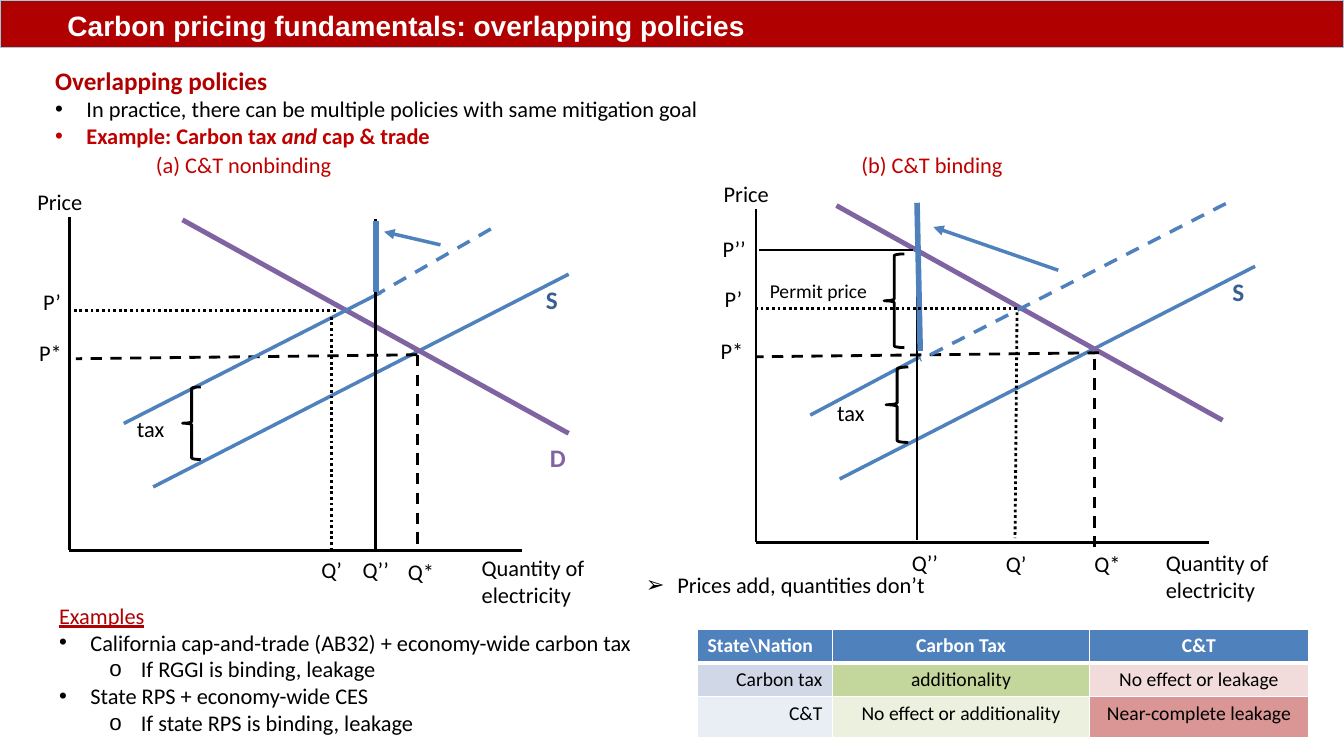
"""Build the slide on overlapping carbon pricing policies."""
from dataclasses import dataclass
from typing import Any

from pptx import Presentation
from pptx.dml.color import RGBColor
from pptx.enum.dml import MSO_LINE_DASH_STYLE as Dash
from pptx.enum.shapes import MSO_CONNECTOR as Link, MSO_SHAPE as Shape
from pptx.enum.text import MSO_ANCHOR as Anchor, MSO_AUTO_SIZE as AutoSize, PP_ALIGN as Align
from pptx.oxml.ns import qn
from pptx.util import Cm, Pt
from lxml.etree import SubElement

COLORS = {
    "banner": "B00000", "edge": "93CDDD", "red": "C00000", "black": "000000",
    "white": "FFFFFF", "blue": "4F81BD", "navy": "376092", "purple": "8064A2",
    "steel": "D0D8E8", "mist": "E9EDF4", "green": "C3D69B", "sage": "EBF1DE",
    "blush": "F2DCDB", "rose": "D99694",
}


@dataclass(frozen=True)
class Line:
    x1: float
    y1: float
    x2: float
    y2: float
    color: str = "black"
    width: float = 2
    dash: Any = None
    arrow: bool = False


@dataclass(frozen=True)
class Label:
    text: str
    left: float
    top: float
    width: float = 1.63
    height: float = 0.94
    color: str = "black"
    size: float = 16
    bold: bool = False


@dataclass(frozen=True)
class Brace:
    left: float
    top: float
    width: float
    height: float


@dataclass(frozen=True)
class Span:
    text: str
    color: str = "black"
    size: float = 16
    bold: bool = False
    italic: bool = False
    underline: bool = False


@dataclass(frozen=True)
class Entry:
    spans: tuple[Span, ...]
    bullet: str = ""
    level: int = 0


@dataclass(frozen=True)
class Panel:
    shift_x: float
    shift_y: float
    lines: tuple[Line, ...]
    braces: tuple[Brace, ...]
    labels: tuple[Label, ...]


SHARED_LINES = (
    Line(14.33, 6.91, 3.86, 12.27, "blue", 2.5),
    Line(1.75, 5.46, 1.75, 13.87),
    Line(13.16, 13.87, 1.75, 13.87),
)
SHARED_LABELS = (
    Label("S", 13.51, 7.04, 2.54, 1.02, "navy", 18, True),
    Label("Price", 0.69, 4.62, 2.21),
)
NONBINDING = Panel(0, 0, (
    Line(4.6, 5.54, 14.33, 10.92, "purple", 3.5),
    Line(10.52, 8.94, 10.52, 13.87, dash=Dash.DASH),
    Line(10.52, 8.94, 1.91, 9.04, dash=Dash.DASH),
    Line(8.46, 7.82, 1.8, 7.82, dash=Dash.ROUND_DOT),
    Line(9.6, 7.37, 3.12, 10.67, "blue", 2.5),
    Line(8.36, 7.98, 8.36, 13.82, dash=Dash.ROUND_DOT),
    Line(9.47, 5.51, 9.47, 13.89),
    Line(9.47, 5.56, 9.47, 7.37, "blue", 4),
    Line(11.1, 6.17, 9.68, 5.84, "blue", 2.5, arrow=True),
    Line(12.37, 5.77, 9.58, 7.37, "blue", 2.5, Dash.DASH),
), (Brace(4.6, 9.75, 0.46, 1.83),), (
    Label("(a) C&T nonbinding", 3.68, 3.68, 6, color="red"),
    Label("D", 13.61, 11.02, 3.23, 1.02, "purple", 18, True),
    Label("tax", 3.2, 10.34, 2.21),
    Label("P’", 0.84, 7.14),
    Label("P*", 0.74, 8.43),
    Label("Q’", 7.85, 13.89, 1.07),
    Label("Q’’", 8.89, 13.89, 1.19),
    Label("Q*", 10.03, 13.94),
    Label("Quantity of electricity", 11.89, 13.84, 4.2, 1.63),
))
BINDING = Panel(17.3, -0.2, (
    Line(23.19, 8.99, 20.42, 10.46, "blue", 2.5),
    Line(23.11, 5.26, 23.11, 13.61),
    Line(21.08, 5.18, 30.81, 10.59, "purple", 3.5),
    Line(27.58, 9.04, 27.58, 13.97, dash=Dash.DASH),
    Line(27.69, 8.89, 19.08, 8.99, dash=Dash.DASH),
    Line(30.89, 5.13, 23.19, 9.07, "blue", 2.5, Dash.DASH),
    Line(23.11, 5.11, 23.19, 8.84, "blue", 4),
    Line(26.67, 6.81, 23.52, 5.72, "blue", 2.5, arrow=True),
    Line(23.01, 6.3, 19.13, 6.3),
    Line(25.63, 7.77, 18.97, 7.77, dash=Dash.ROUND_DOT),
    Line(25.63, 7.87, 25.58, 13.56, dash=Dash.ROUND_DOT),
), (Brace(22.28, 6.4, 0.51, 2.36), Brace(22.33, 9.25, 0.56, 1.9)), (
    Label("(b) C&T binding", 21.46, 3.68, 6, color="red"),
    Label("Permit price", 19.15, 6.91, 4.98, 0.86, size=14),
    Label("tax", 20.85, 9.93, 2.21),
    Label("P’’", 17.96, 5.79),
    Label("P’", 18.01, 7.06),
    Label("P*", 17.91, 8.38),
    Label("Q’’", 22.73, 13.72, 1.19),
    Label("Q’", 25.1, 13.74, 1.19),
    Label("Q*", 27.33, 13.74),
    Label("Quantity of electricity", 29.13, 13.72, 3.81, 1.63),
))
INTRO = (
    Entry((Span("Overlapping policies", "banner", 18, True),)),
    Entry((Span("In practice, there can be multiple policies with same mitigation goal"),), "•"),
    Entry((Span("Example: Carbon tax ", "red", bold=True),
           Span("and", "red", bold=True, italic=True),
           Span(" cap & trade", "red", bold=True)), "•"),
)
EXAMPLES = (
    Entry((Span("Examples", "banner", underline=True),)),
    Entry((Span("California cap-and-trade (AB32) + economy-wide carbon tax"),), "•"),
    Entry((Span("If RGGI is binding, leakage"),), "o", 1),
    Entry((Span("State RPS + economy-wide CES"),), "•"),
    Entry((Span("If state RPS is binding, leakage"),), "o", 1),
)
LESSON = (Entry((Span("Prices add, quantities don’t"),), "➢"),)
TABLE_ROWS = (
    (("State\\Nation", "blue"), ("Carbon Tax", "blue"), ("C&T", "blue")),
    (("Carbon tax", "steel"), ("additionality", "green"), ("No effect or leakage", "blush")),
    (("C&T", "mist"), ("No effect or additionality", "sage"), ("Near-complete leakage", "rose")),
)


def rgb(name: str) -> RGBColor:
    """Return the named colour."""
    return RGBColor.from_string(COLORS[name])


def write_span(para: Any, span: Span, face: str = "Calibri") -> None:
    """Add one formatted run to a paragraph."""
    run = para.add_run()
    run.text = span.text
    formats = {"name": face, "size": Pt(span.size), "bold": span.bold,
               "italic": span.italic, "underline": span.underline}
    for key, value in formats.items():
        setattr(run.font, key, value)
    run.font.color.rgb = rgb(span.color)


def add_text(page: Any, entries: tuple[Entry, ...], left: float, top: float,
             width: float, height: float) -> None:
    """Add a text box with optional bullets."""
    frame = page.shapes.add_textbox(Cm(left), Cm(top), Cm(width), Cm(height)).text_frame
    frame.word_wrap = True
    for index, entry in enumerate(entries):
        para = frame.paragraphs[0] if index == 0 else frame.add_paragraph()
        para.level = entry.level
        if entry.bullet:
            props = para._p.get_or_add_pPr()
            props.set("marL", str(Cm(0.79 + 1.27 * entry.level)))
            props.set("indent", str(Cm(-0.79)))
            SubElement(props, qn("a:buFont"), typeface="Arial")
            SubElement(props, qn("a:buChar"), char=entry.bullet)
        for span in entry.spans:
            write_span(para, span)


def add_line(page: Any, line: Line, dx: float = 0, dy: float = 0) -> None:
    """Draw a line shifted by dx and dy."""
    link = page.shapes.add_connector(Link.STRAIGHT, Cm(line.x1 + dx), Cm(line.y1 + dy),
                                     Cm(line.x2 + dx), Cm(line.y2 + dy))
    link.line.color.rgb = rgb(line.color)
    link.line.width = Pt(line.width)
    if line.dash:
        link.line.dash_style = line.dash
    if line.arrow:
        SubElement(link.line._get_or_add_ln(), qn("a:tailEnd"), type="triangle")
    SubElement(link._element.spPr, qn("a:effectLst"))


def add_label(page: Any, label: Label, dx: float = 0, dy: float = 0) -> None:
    """Write a label shifted by dx and dy."""
    span = Span(label.text, label.color, label.size, label.bold)
    add_text(page, (Entry((span,)),), label.left + dx, label.top + dy, label.width, label.height)


def add_panel(page: Any, panel: Panel) -> None:
    """Draw one supply and demand diagram."""
    for line in SHARED_LINES:
        add_line(page, line, panel.shift_x, panel.shift_y)
    for line in panel.lines:
        add_line(page, line)
    for brace in panel.braces:
        box = page.shapes.add_shape(Shape.LEFT_BRACE, Cm(brace.left), Cm(brace.top),
                                    Cm(brace.width), Cm(brace.height))
        box.shadow.inherit = False
        box.fill.background()
        box.line.color.rgb = rgb("black")
        box.line.width = Pt(2)
    for label in SHARED_LABELS:
        add_label(page, label, panel.shift_x, panel.shift_y)
    for label in panel.labels:
        add_label(page, label)


def add_title(page: Any) -> None:
    """Format the title placeholder as a banner."""
    title = page.shapes.title
    place = {"left": Cm(0), "top": Cm(0), "width": Cm(33.87), "height": Cm(1.19)}
    for key, value in place.items():
        setattr(title, key, value)
    title.fill.solid()
    title.fill.fore_color.rgb = rgb("banner")
    title.line.color.rgb = rgb("edge")
    title.line.width = Pt(0)
    frame = title.text_frame
    layout = {"margin_left": Cm(1.7), "vertical_anchor": Anchor.BOTTOM,
              "auto_size": AutoSize.NONE, "word_wrap": True}
    for key, value in layout.items():
        setattr(frame, key, value)
    para = frame.paragraphs[0]
    para.alignment = Align.LEFT
    write_span(para, Span("Carbon pricing fundamentals: overlapping policies", "white", 20, True), "Arial")


def add_outcomes(page: Any) -> None:
    """Add the table of policy outcomes."""
    table = page.shapes.add_table(3, 3, Cm(17.58), Cm(15.85), Cm(15.39), Cm(2.62)).table
    for column, width in zip(table.columns, (3.4, 6.48, 5.51)):
        column.width = Cm(width)
    for row, height in zip(table.rows, (0.79, 0.79, 1.04)):
        row.height = Cm(height)
    for r, cells in enumerate(TABLE_ROWS):
        for c, (text, fill) in enumerate(cells):
            cell = table.cell(r, c)
            para = cell.text_frame.paragraphs[0]
            para.alignment = Align.CENTER if c else Align.RIGHT if r else Align.LEFT
            write_span(para, Span(text, "black" if r else "white", 14, not r))
            props = cell._tc.get_or_add_tcPr()
            for side in "LRTB":
                thick = (side, r) in (("B", 0), ("T", 1))
                edge = SubElement(props, qn(f"a:ln{side}"), w=str(Pt(3 if thick else 1)))
                SubElement(SubElement(edge, qn("a:solidFill")), qn("a:srgbClr"), val=COLORS["white"])
            cell.fill.solid()
            cell.fill.fore_color.rgb = rgb(fill)


def main() -> None:
    """Build and save the deck."""
    deck = Presentation()
    deck.slide_width, deck.slide_height = Cm(33.87), Cm(19.05)
    page = deck.slides.add_slide(deck.slide_layouts[5])
    add_title(page)
    add_text(page, INTRO, 1.14, 1.52, 24.71, 2.4)
    for panel in (NONBINDING, BINDING):
        add_panel(page, panel)
    add_text(page, EXAMPLES, 1.24, 15.04, 15.62, 3.68)
    add_text(page, LESSON, 16.03, 14.27, 8.48, 0.94)
    add_outcomes(page)
    deck.save("out.pptx")


if __name__ == "__main__":
    main()
